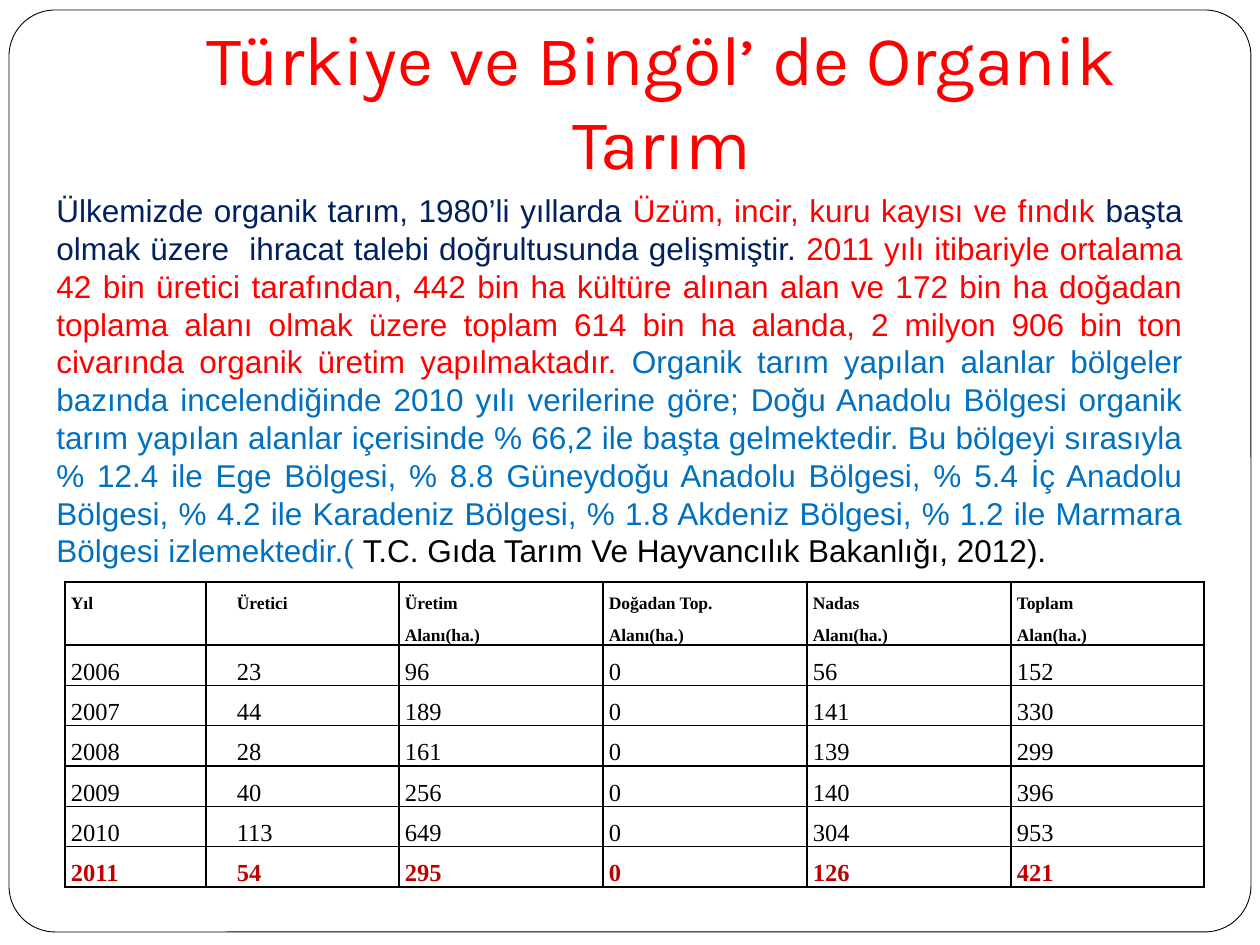
import lxml.etree
import pptx
import pptx.dml.color
import pptx.enum.shapes
import pptx.enum.text
import pptx.oxml.ns
import pptx.util

HUES = {
    "black": "000000", "white": "FFFFFF", "red": "FF0000",
    "navy": "002060", "blue": "0070C0", "dark": "C00000",
}
TITLE = [("Türkiye ve Bingöl’ de Organik Tarım", "red")]
BODY = [
    ("Ülkemizde organik tarım, 1980’li yıllarda ", "navy"),
    ("Üzüm, incir, kuru kayısı ve fındık ", "red"),
    ("başta olmak üzere  ihracat talebi doğrultusunda gelişmiştir. ", "navy"),
    ("2011 yılı itibariyle ortalama 42 bin üretici tarafından, 442 bin ha "
     "kültüre alınan alan ve 172 bin ha doğadan toplama alanı olmak üzere "
     "toplam 614 bin ha alanda, 2 milyon 906 bin ton civarında organik "
     "üretim yapılmaktadır. ", "red"),
    ("Organik tarım yapılan alanlar bölgeler bazında incelendiğinde 2010 "
     "yılı verilerine göre; Doğu Anadolu Bölgesi organik tarım yapılan "
     "alanlar içerisinde % 66,2 ile başta gelmektedir. Bu bölgeyi sırasıyla "
     "% 12.4 ile Ege Bölgesi, % 8.8 Güneydoğu Anadolu Bölgesi, % 5.4 İç "
     "Anadolu Bölgesi, % 4.2 ile Karadeniz Bölgesi, % 1.8 Akdeniz Bölgesi, "
     "% 1.2 ile Marmara Bölgesi izlemektedir.( ", "blue"),
    ("T.C. Gıda Tarım Ve Hayvancılık Bakanlığı, 2012). ", "black"),
]
ROWS = [
    ["Yıl", "", "Üretici", "Üretim", "Doğadan Top.", "Nadas", "Toplam"],
    ["", "", "", "Alanı(ha.)", "Alanı(ha.)", "Alanı(ha.)", "Alan(ha.)"],
    ["2006", "", "23", "96", "0", "56", "152"],
    ["2007", "", "44", "189", "0", "141", "330"],
    ["2008", "", "28", "161", "0", "139", "299"],
    ["2009", "", "40", "256", "0", "140", "396"],
    ["2010", "", "113", "649", "0", "304", "953"],
    ["2011", "", "54", "295", "0", "126", "421"],
]
COLS = [141, 25, 168, 204, 204, 204, 193]
HEAD = 2
GAP = 1


def px(num):
    """Turn pixels into EMU."""
    return pptx.util.Emu(num * 914400 // 126)


def tint(name):
    """Return the named colour."""
    return pptx.dml.color.RGBColor.from_string(HUES[name])


def write(para, text, size, face, hue, bold=False):
    """Add one styled run to a paragraph."""
    run = para.add_run()
    run.text = text
    run.font.size = pptx.util.Pt(size)
    run.font.name = face
    run.font.bold = bold
    run.font.color.rgb = tint(hue)


def frame(slide, box):
    """Draw the rounded page border."""
    kind = pptx.enum.shapes.MSO_SHAPE.ROUNDED_RECTANGLE
    shape = slide.shapes.add_shape(kind, *map(px, box))
    shape.adjustments[0] = 0.05
    shape.shadow.inherit = False
    shape.fill.solid()
    shape.fill.fore_color.rgb = tint("white")
    shape.line.color.rgb = tint("black")
    shape.line.width = pptx.util.Pt(0.5)


def prose(slide, box, runs, size, face, align, anchor, foot):
    """Place a paragraph of coloured runs in a text box."""
    text = slide.shapes.add_textbox(*map(px, box)).text_frame
    text.word_wrap = True
    text.vertical_anchor = anchor
    text.margin_bottom = px(foot)
    para = text.paragraphs[0]
    para.alignment = align
    for words, hue in runs:
        write(para, words, size, face, hue)


def edge(cell, side, shown):
    """Set one border of a cell, black or absent."""
    qn = pptx.oxml.ns.qn
    props = cell._tc.get_or_add_tcPr()
    line = lxml.etree.SubElement(props, qn("a:ln" + side), w="12700")
    if shown:
        fill = lxml.etree.SubElement(line, qn("a:solidFill"))
        lxml.etree.SubElement(fill, qn("a:srgbClr"), val=HUES["black"])
    else:
        lxml.etree.SubElement(line, qn("a:noFill"))


def fill(cell, text, row, col):
    """Style and fill one table cell."""
    sides = {"L": col != GAP + 1, "R": col != GAP,
             "T": row != HEAD - 1, "B": row != HEAD - 2}
    for side, shown in sides.items():
        edge(cell, side, shown)
    cell.fill.background()
    cell.margin_left = cell.margin_right = px(6)
    cell.margin_top = cell.margin_bottom = 0
    cell.vertical_anchor = pptx.enum.text.MSO_ANCHOR.BOTTOM
    para = cell.text_frame.paragraphs[0]
    para.line_spacing = 1.15
    last = row == len(ROWS) - 1
    if text:
        write(para, text, 10 if row < HEAD else 14, "Times New Roman",
              "dark" if last else "black", row < HEAD or last)
    else:
        lxml.etree.SubElement(para._p, pptx.oxml.ns.qn("a:endParaRPr"), sz="1000")


def grid(slide, box, head):
    """Build the yearly table, its head rows sharing the head height."""
    shape = slide.shapes.add_table(len(ROWS), len(COLS), *map(px, box))
    table = shape.table
    table.first_row = table.horz_banding = False
    for col, wide in zip(table.columns, COLS):
        col.width = px(wide)
    for num, row in enumerate(table.rows):
        if num < HEAD:
            row.height = px(head) // HEAD
        else:
            row.height = px(box[3] - head) // (len(ROWS) - HEAD)
    for num, texts in enumerate(ROWS):
        for col, text in enumerate(texts):
            fill(table.cell(num, col), text, num, col)


def main():
    """Build and save the slide."""
    deck = pptx.Presentation()
    deck.slide_width, deck.slide_height = px(1260), px(945)
    slide = deck.slides.add_slide(deck.slide_layouts[6])
    align, anchor = pptx.enum.text.PP_ALIGN, pptx.enum.text.MSO_ANCHOR
    frame(slide, (9, 10, 1242, 922))
    prose(slide, (126, 38, 1071, 158), TITLE, 40, "Karla",
          align.CENTER, anchor.BOTTOM, 13)
    prose(slide, (44, 185, 1151, 547), BODY, 18, "Arial",
          align.JUSTIFY, anchor.TOP, 6)
    grid(slide, (65, 582, 1139, 305), 63)
    deck.save("out.pptx")


if __name__ == "__main__":
    main()
